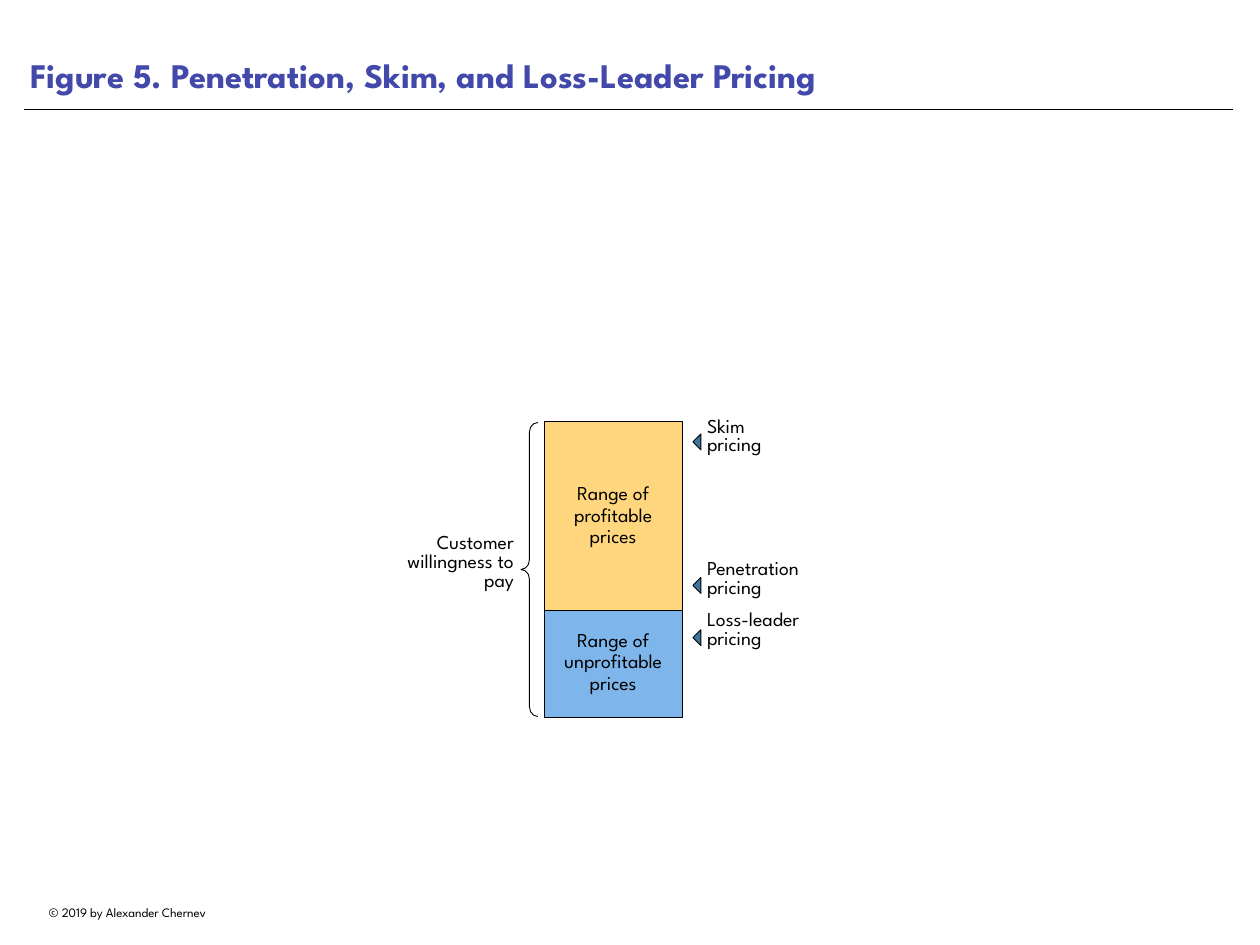
"""Build the slide on penetration, skim, and loss-leader pricing."""
from dataclasses import dataclass
from typing import Any

import pptx
import pptx.dml.color
import pptx.enum.shapes
import pptx.enum.text
import pptx.oxml
import pptx.oxml.ns
import pptx.util

Inches = pptx.util.Inches
Pt = pptx.util.Pt
RGBColor = pptx.dml.color.RGBColor
Align = pptx.enum.text.PP_ALIGN
Anchor = pptx.enum.text.MSO_ANCHOR
AutoSize = pptx.enum.text.MSO_AUTO_SIZE
Preset = pptx.enum.shapes.MSO_SHAPE


@dataclass(frozen=True)
class Theme:
    """Colours, font and sizes of the slide."""
    font: str = "League Spartan"
    ink: RGBColor = RGBColor(0x00, 0x00, 0x00)
    heading: RGBColor = RGBColor(0x43, 0x49, 0xAA)
    profitable: RGBColor = RGBColor(0xFF, 0xD6, 0x7E)
    unprofitable: RGBColor = RGBColor(0x7E, 0xB5, 0xEA)
    marker: RGBColor = RGBColor(0x3D, 0x74, 0x9D)
    heading_size: float = 28
    label_size: float = 16
    credit_size: float = 10.5
    outline: float = 0.75
    rule: float = 0.5


@dataclass(frozen=True)
class Box:
    """Place of an element in inches."""
    left: float
    top: float
    width: float
    height: float

    def lengths(self) -> list[int]:
        """Give left, top, width and height as lengths."""
        return [Inches(v) for v in (self.left, self.top, self.width, self.height)]


@dataclass(frozen=True)
class PriceRange:
    """A band of the price bar."""
    text: str
    top: float
    height: float
    fill: RGBColor


@dataclass(frozen=True)
class Strategy:
    """A pricing strategy and the price level it points at."""
    text: str
    label_top: float
    level: float


THEME = Theme()
BAR_LEFT, BAR_WIDTH = 6.14, 1.56
LABEL_LEFT = 7.92
MARKER_LEFT, MARKER_SIZE = 7.82, 0.09

RANGES = (
    PriceRange("Range of\vunprofitable prices", 6.86, 1.24, THEME.unprofitable),
    PriceRange("Range of\nprofitable prices", 4.76, 2.13, THEME.profitable),
)
STRATEGIES = (
    Strategy("Skim\npricing", 4.66, 4.99),
    Strategy("Penetration pricing", 6.27, 6.61),
    Strategy("Loss-leader pricing", 6.84, 7.2),
)


def apply(target: Any, values: dict[str, Any]) -> None:
    """Set each named attribute of the target."""
    for name, value in values.items():
        setattr(target, name, value)


def write(shape: Any, text: str, size: float = THEME.label_size,
          color: RGBColor = THEME.ink, bold: bool = False,
          inset: float = 0.06, frame: dict[str, Any] | None = None,
          paragraph: dict[str, Any] | None = None) -> None:
    """Write formatted text into a shape."""
    sides = ("margin_left", "margin_top", "margin_right", "margin_bottom")
    text_frame = shape.text_frame
    text_frame.text = text
    apply(text_frame, {"word_wrap": True, "auto_size": AutoSize.NONE,
                       **dict.fromkeys(sides, Inches(inset)), **(frame or {})})
    for line in text_frame.paragraphs:
        apply(line, paragraph or {})
        for run in line.runs:
            apply(run.font, {"name": THEME.font, "size": Pt(size), "bold": bold})
            run.font.color.rgb = color


def paint(shape: Any, fill: RGBColor | None = None) -> None:
    """Outline a shape and fill it, or leave it hollow."""
    shape.shadow.inherit = False
    if fill is None:
        shape.fill.background()
    else:
        shape.fill.solid()
        shape.fill.fore_color.rgb = fill
    shape.line.color.rgb = THEME.ink
    shape.line.width = Pt(THEME.outline)


def add_heading(slide: Any) -> None:
    """Format the title and draw the rule under it."""
    title = slide.shapes.title
    apply(title, dict(zip(("left", "top", "width", "height"),
                          Box(0.27, 0, 13.64, 1.15).lengths())))
    write(title, "Figure 5. Penetration, Skim, and Loss-Leader Pricing",
          THEME.heading_size, THEME.heading, True, 0.07,
          {"vertical_anchor": Anchor.BOTTOM}, {"alignment": Align.LEFT})
    rule = slide.shapes.add_connector(
        pptx.enum.shapes.MSO_CONNECTOR.STRAIGHT,
        Inches(0.27), Inches(1.24), Inches(13.92), Inches(1.24))
    rule.line.color.rgb = THEME.ink
    rule.line.width = Pt(THEME.rule)
    properties = rule._element.spPr
    properties.append(pptx.oxml.parse_xml(
        f"<a:effectLst {pptx.oxml.ns.nsdecls('a')}/>"))


def add_willingness(slide: Any) -> None:
    """Draw the brace along the bar and its label."""
    brace = slide.shapes.add_shape(
        Preset.LEFT_BRACE, *Box(5.88, 4.77, 0.19, 3.32).lengths())
    brace.adjustments[0], brace.adjustments[1] = 0.57, 0.5
    paint(brace)
    label = slide.shapes.add_textbox(*Box(4.46, 5.98, 1.4, 0.9).lengths())
    write(label, "Customer willingness to pay",
          paragraph={"alignment": Align.RIGHT, "line_spacing": 0.8})


def add_range(slide: Any, band: PriceRange) -> None:
    """Draw one band of the price bar."""
    bar = slide.shapes.add_shape(
        Preset.RECTANGLE, *Box(BAR_LEFT, band.top, BAR_WIDTH, band.height).lengths())
    paint(bar, band.fill)
    write(bar, band.text, frame={"vertical_anchor": Anchor.MIDDLE},
          paragraph={"alignment": Align.CENTER, "line_spacing": 0.9})
    bar.text_frame.paragraphs[0].space_before = Pt(2)


def add_strategy(slide: Any, strategy: Strategy) -> None:
    """Draw a strategy label and the marker at its price level."""
    label = slide.shapes.add_textbox(
        *Box(LABEL_LEFT, strategy.label_top, 1.56, 0.68).lengths())
    write(label, strategy.text, paragraph={"line_spacing": 0.8})
    right = Inches(MARKER_LEFT + MARKER_SIZE)
    outline = slide.shapes.build_freeform(right, Inches(strategy.level - MARKER_SIZE))
    outline.add_line_segments([
        (Inches(MARKER_LEFT), Inches(strategy.level)),
        (right, Inches(strategy.level + MARKER_SIZE))])
    paint(outline.convert_to_shape(), THEME.marker)


def main() -> None:
    """Build and save the slide."""
    deck = pptx.Presentation()
    apply(deck, {"slide_width": Inches(14.22), "slide_height": Inches(10.67)})
    slide = deck.slides.add_slide(deck.slide_layouts.get_by_name("Title Only"))
    add_heading(slide)
    add_willingness(slide)
    for band in RANGES:
        add_range(slide, band)
    for strategy in STRATEGIES:
        add_strategy(slide, strategy)
    credit = slide.shapes.add_textbox(*Box(0.27, 10.16, 2.34, 0.28).lengths())
    write(credit, "© 2019 by Alexander Chernev", THEME.credit_size, inset=0.05,
          frame={"word_wrap": False, "auto_size": AutoSize.SHAPE_TO_FIT_TEXT},
          paragraph={"alignment": Align.CENTER})
    deck.save("out.pptx")


if __name__ == "__main__":
    main()
